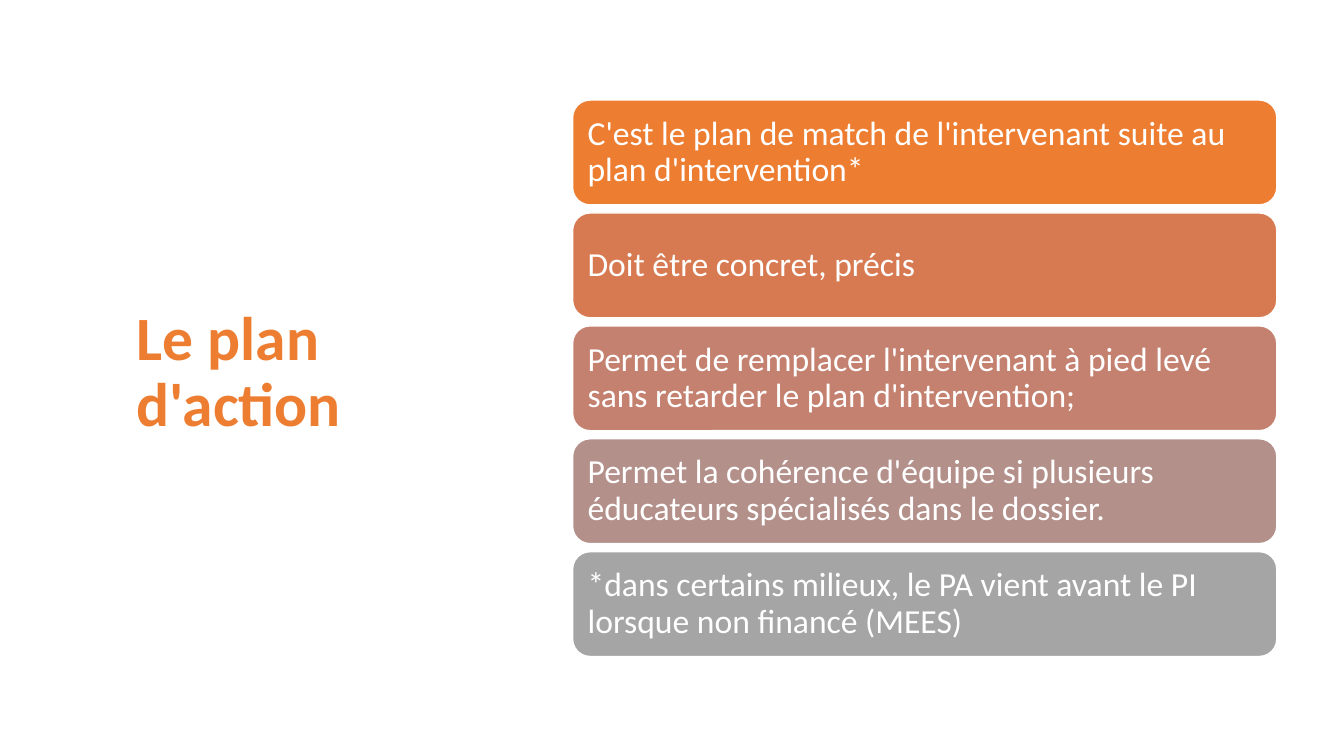
from pptx import Presentation
from pptx.dml.color import RGBColor
from pptx.enum.shapes import MSO_SHAPE
from pptx.enum.text import MSO_ANCHOR, PP_ALIGN
from pptx.util import Pt

ROUND = MSO_SHAPE.ROUNDED_RECTANGLE
MIDDLE = MSO_ANCHOR.MIDDLE
LEFT = PP_ALIGN.LEFT

COLORS = {
    "white": "FFFFFF",
    "orange": "ED7D31",
    "rust": "D87A51",
    "rose": "C48170",
    "mauve": "B4908B",
    "gray": "A5A5A5",
}
FRAME = {
    "word_wrap": True,
    "vertical_anchor": MIDDLE,
    "margin_left": Pt(7.2),
    "margin_right": Pt(7.2),
    "margin_top": Pt(3.6),
    "margin_bottom": Pt(3.6),
}
PARA = {"alignment": LEFT, "line_spacing": 0.9}
TITLE = {"name": "Calibri", "size": Pt(44), "bold": True}
BODY = {"name": "Calibri", "size": Pt(24), "bold": False}

POINTS = [
    ("C'est le plan de match de l'intervenant suite au plan d'intervention*", "orange"),
    ("Doit être concret, précis", "rust"),
    ("Permet de remplacer l'intervenant à pied levé sans retarder le plan d'intervention;", "rose"),
    ("Permet la cohérence d'équipe si plusieurs éducateurs spécialisés dans le dossier.", "mauve"),
    ("*dans certains milieux, le PA vient avant le PI lorsque non financé (MEES)", "gray"),
]
CARD_LEFT, CARD_TOP = 409, 71.5
CARD_WIDTH, CARD_HEIGHT = 503, 74.9
CARD_STEP = 80.64


def rgb(name):
    return RGBColor.from_string(COLORS[name])


def apply(target, values):
    for key, value in values.items():
        setattr(target, key, value)


def write(shape, text, font, color):
    frame = shape.text_frame
    apply(frame, FRAME)
    para = frame.paragraphs[0]
    apply(para, PARA)
    run = para.add_run()
    run.text = text
    apply(run.font, font)
    run.font.color.rgb = rgb(color)


def add_title(slide, text):
    box = slide.shapes.add_textbox(Pt(90.7), Pt(76.3), Pt(231.8), Pt(380.9))
    write(box, text, TITLE, "orange")


def add_card(slide, top, text, color):
    card = slide.shapes.add_shape(
        ROUND, Pt(CARD_LEFT), Pt(top), Pt(CARD_WIDTH), Pt(CARD_HEIGHT))
    card.shadow.inherit = False
    card.fill.solid()
    card.fill.fore_color.rgb = rgb(color)
    card.line.color.rgb = rgb("white")
    card.line.width = Pt(1)
    write(card, text, BODY, "white")


def main():
    deck = Presentation()
    deck.slide_width, deck.slide_height = Pt(960), Pt(540)
    slide = deck.slides.add_slide(deck.slide_layouts[6])
    add_title(slide, "Le plan d'action")
    for row, (text, color) in enumerate(POINTS):
        add_card(slide, CARD_TOP + row * CARD_STEP, text, color)
    deck.save("out.pptx")


if __name__ == "__main__":
    main()
